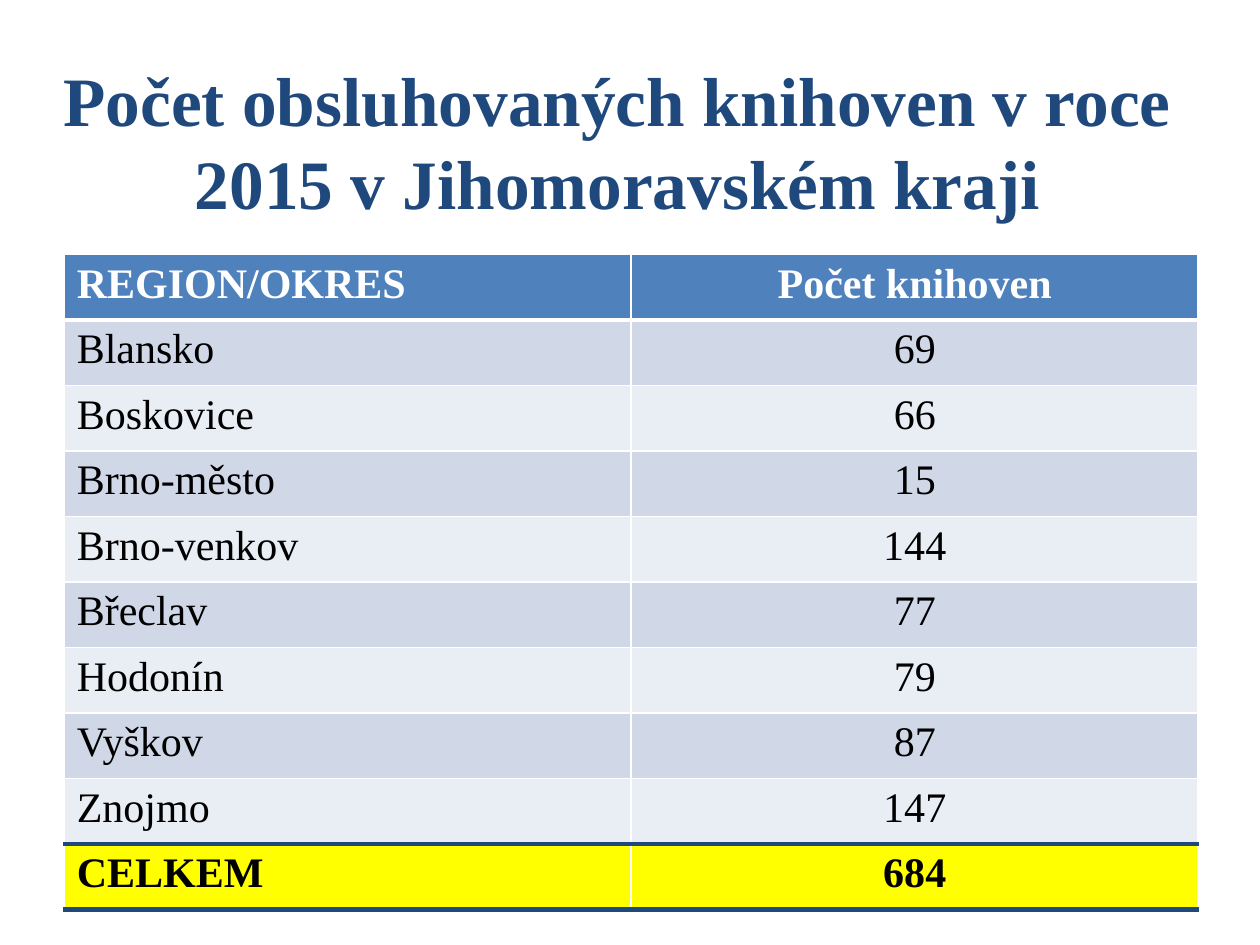
from lxml.etree import SubElement
from pptx import Presentation
from pptx.dml.color import RGBColor
from pptx.enum.text import MSO_ANCHOR, MSO_AUTO_SIZE, PP_ALIGN
from pptx.oxml.ns import qn
from pptx.util import Inches, Pt

FONT = "Times New Roman"
WHITE = RGBColor(0xFF, 0xFF, 0xFF)
BLACK = RGBColor(0x00, 0x00, 0x00)
NAVY = RGBColor(0x1F, 0x49, 0x7D)
BLUE = RGBColor(0x4F, 0x81, 0xBD)
YELLOW = RGBColor(0xFF, 0xFF, 0x00)
BANDS = (RGBColor(0xE9, 0xED, 0xF4), RGBColor(0xD0, 0xD8, 0xE8))

TITLE = "Počet obsluhovaných knihoven v roce 2015 v Jihomoravském kraji"
ROWS = [
    ("REGION/OKRES", "Počet knihoven"),
    ("Blansko", "69"),
    ("Boskovice", "66"),
    ("Brno-město", "15"),
    ("Brno-venkov", "144"),
    ("Břeclav", "77"),
    ("Hodonín", "79"),
    ("Vyškov", "87"),
    ("Znojmo", "147"),
    ("CELKEM", "684"),
]
LAST = len(ROWS) - 1
ALIGNMENTS = (PP_ALIGN.LEFT, PP_ALIGN.CENTER)

TITLE_BOX = [Inches(n) for n in (0, 0.52, 9.8, 1.18)]
TABLE_BOX = [Inches(n) for n in (0.51, 2.02, 9, 5.2)]


def format_para(para, size, color, bold, alignment):
    para.alignment = alignment
    para.font.name = FONT
    para.font.size = Pt(size)
    para.font.bold = bold
    para.font.color.rgb = color


def add_title(page, box):
    title = page.shapes.title
    title.left, title.top, title.width, title.height = box
    frame = title.text_frame
    frame.text = TITLE
    frame.word_wrap = True
    frame.auto_size = MSO_AUTO_SIZE.NONE
    frame.vertical_anchor = MSO_ANCHOR.MIDDLE
    format_para(frame.paragraphs[0], 39.6, NAVY, True, PP_ALIGN.CENTER)


def set_borders(cell, top, bottom):
    """Draw thin white sides and the given (colour, points) top and bottom."""
    side = (WHITE, 1)
    properties = cell._tc.get_or_add_tcPr()
    for tag, (color, points) in zip(("lnL", "lnR", "lnT", "lnB"), (side, side, top, bottom)):
        line = SubElement(properties, qn(f"a:{tag}"), w=str(Pt(points)))
        fill = SubElement(line, qn("a:solidFill"))
        SubElement(fill, qn("a:srgbClr"), val=str(color))


def rule_below(row):
    """Colour and width of the line under a row; row -1 is the table's top."""
    if row == 0:
        return WHITE, 3
    return (NAVY, 3) if row >= LAST - 1 else (WHITE, 1)


def row_colors(row):
    """Fill and font colour of a row."""
    if row == 0:
        return BLUE, WHITE
    return (YELLOW if row == LAST else BANDS[row % 2]), BLACK


def add_library_table(page, box):
    table = page.shapes.add_table(len(ROWS), len(ALIGNMENTS), *box).table
    for row, texts in enumerate(ROWS):
        fill_color, font_color = row_colors(row)
        for column, text in enumerate(texts):
            cell = table.cell(row, column)
            cell.text = text
            set_borders(cell, rule_below(row - 1), rule_below(row))
            cell.fill.solid()
            cell.fill.fore_color.rgb = fill_color
            format_para(cell.text_frame.paragraphs[0], 24, font_color,
                        row in (0, LAST), ALIGNMENTS[column])


def main():
    deck = Presentation()
    deck.slide_width, deck.slide_height = Inches(10), Inches(7.5)
    page = deck.slides.add_slide(deck.slide_layouts.get_by_name("Title Only"))
    add_title(page, TITLE_BOX)
    add_library_table(page, TABLE_BOX)
    deck.save("out.pptx")


if __name__ == "__main__":
    main()
